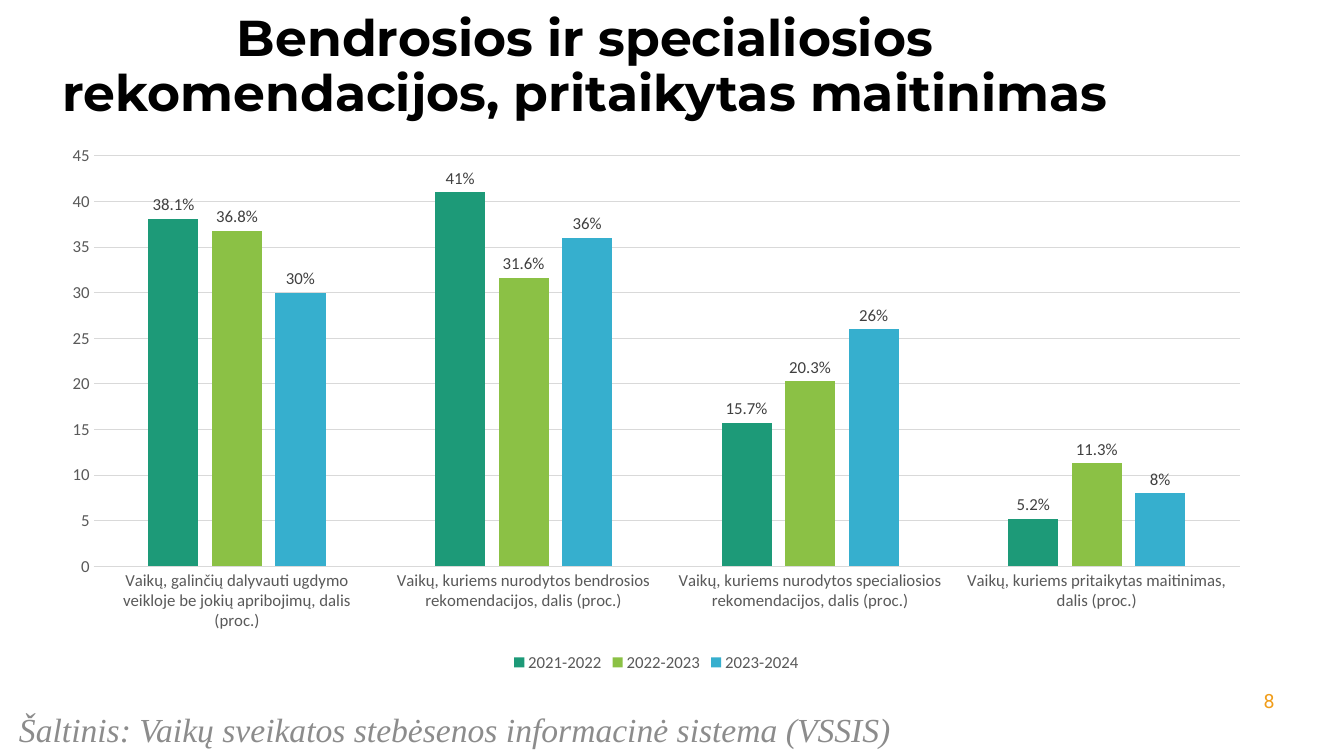
from pptx import Presentation
from pptx.chart.data import CategoryChartData
from pptx.dml.color import RGBColor
from pptx.enum import chart as ch, text as tx
from pptx.util import Inches, Pt

COLORS = {
    "title": "000000", "source": "8C8C8C", "number": "F19D19",
    "axis": "595959", "grid": "D9D9D9", "label": "404040",
}
CATEGORIES = [
    "Vaikų, galinčių dalyvauti ugdymo veikloje be jokių apribojimų, dalis (proc.)",
    "Vaikų, kuriems nurodytos bendrosios rekomendacijos, dalis (proc.)",
    "Vaikų, kuriems nurodytos specialiosios rekomendacijos, dalis (proc.)",
    "Vaikų, kuriems pritaikytas maitinimas, dalis (proc.)",
]
YEARS = [
    ("2021-2022", (38.1, 41, 15.7, 5.2), "1D9A78"),
    ("2022-2023", (36.8, 31.6, 20.3, 11.3), "8BC145"),
    ("2023-2024", (30, 36, 26, 8), "36AFCE"),
]


def style_font(font, name, size, color):
    font.name = name
    font.size = Pt(size)
    font.color.rgb = RGBColor.from_string(COLORS[color])


def place_text(box, area, words, align, name, size, color):
    """Position a text shape, fill it with one paragraph and return that paragraph."""
    box.left, box.top, box.width, box.height = map(Inches, area)
    frame = box.text_frame
    frame.word_wrap = True
    frame.auto_size = tx.MSO_AUTO_SIZE.NONE
    frame.text = words
    para = frame.paragraphs[0]
    para.alignment = align
    style_font(para.font, name, size, color)
    return para


deck = Presentation()
deck.slide_width, deck.slide_height = Inches(13.33), Inches(7.5)
page = deck.slides.add_slide(deck.slide_layouts[5])

# Title
title = page.shapes.title
heading = place_text(
    title, (0.48, 0.14, 10.64, 1.06),
    "Bendrosios ir specialiosios rekomendacijos, pritaikytas maitinimas",
    tx.PP_ALIGN.CENTER, "Montserrat", 36, "title")
heading.font.bold = True
heading.line_spacing = 0.9
title.text_frame.vertical_anchor = tx.MSO_ANCHOR.MIDDLE

# Chart
data = CategoryChartData()
data.categories = CATEGORIES
for year, shares, _ in YEARS:
    data.add_series(year, shares)
chart = page.shapes.add_chart(
    ch.XL_CHART_TYPE.COLUMN_CLUSTERED,
    Inches(0.48), Inches(1.34), Inches(12.06), Inches(5.37), data).chart
style_font(chart.font, "Calibri", 10, "title")
chart.has_title = False
chart.has_legend = True
chart.legend.position = ch.XL_LEGEND_POSITION.BOTTOM
chart.legend.include_in_layout = False
style_font(chart.legend.font, "Calibri", 12, "axis")

for axis in (chart.category_axis, chart.value_axis):
    axis.major_tick_mark = axis.minor_tick_mark = ch.XL_TICK_MARK.NONE
    style_font(axis.tick_labels.font, "Calibri", 12, "axis")
chart.value_axis.minimum_scale = 0
chart.value_axis.maximum_scale = 45
chart.value_axis.major_unit = 5
chart.value_axis.format.line.fill.background()
for line in (chart.category_axis.format.line,
             chart.value_axis.major_gridlines.format.line):
    line.color.rgb = RGBColor.from_string(COLORS["grid"])
    line.width = Pt(0.75)

plot = chart.plots[0]
plot.vary_by_categories = False
plot.gap_width = 219
plot.overlap = -27
for series, (_, _, color) in zip(plot.series, YEARS):
    series.format.fill.solid()
    series.format.fill.fore_color.rgb = RGBColor.from_string(color)
    labels = series.data_labels
    labels.show_value = True
    labels.position = ch.XL_LABEL_POSITION.OUTSIDE_END
    labels.number_format = 'General"%"'
    labels.number_format_is_linked = False
    style_font(labels.font, "Calibri", 12, "label")

# Source and page number
source = place_text(
    page.shapes.add_textbox(0, 0, 0, 0), (0.09, 6.98, 9.43, 0.38),
    "Šaltinis: Vaikų sveikatos stebėsenos informacinė sistema (VSSIS)",
    tx.PP_ALIGN.LEFT, "Times New Roman", 24, "source")
source.font.italic = True
place_text(page.shapes.add_textbox(0, 0, 0, 0), (12.22, 6.79, 0.52, 0.4),
           "8", tx.PP_ALIGN.RIGHT, "Roboto", 14, "number")

deck.save("out.pptx")
